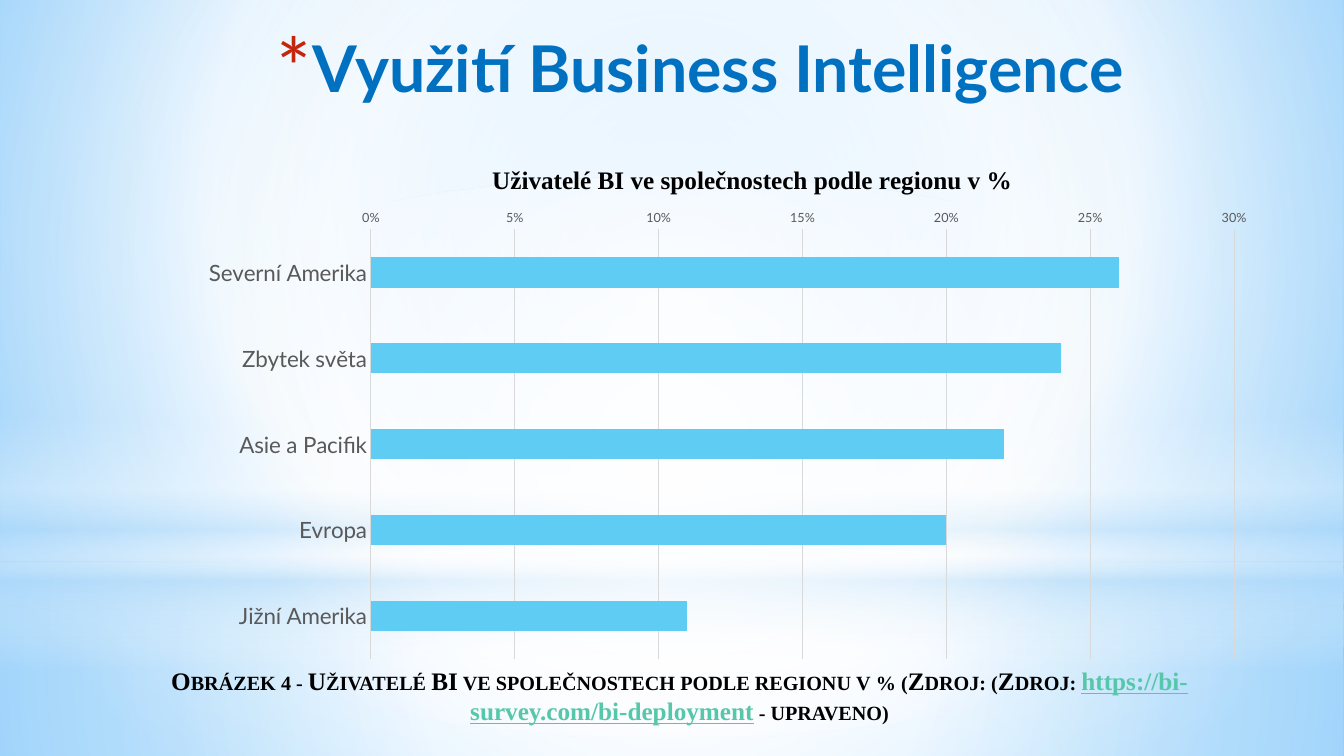
"""Build a slide with a bar chart of Business Intelligence users by region."""
from pptx import Presentation
from pptx.chart.data import CategoryChartData
from pptx.dml.color import RGBColor
from pptx.enum.chart import XL_CHART_TYPE as Chart, XL_TICK_MARK as Tick
from pptx.enum.shapes import MSO_SHAPE as Preset
from pptx.enum.text import MSO_ANCHOR as Anchor, MSO_AUTO_SIZE as Fit, PP_ALIGN as Align
from pptx.oxml import parse_xml
from pptx.oxml.ns import nsdecls, qn
from pptx.util import Inches, Pt

TITLE = "Využití Business Intelligence"
CHART_TITLE = "Uživatelé BI ve společnostech podle regionu v %"
REGIONS = {
    "Severní Amerika": 0.26,
    "Zbytek světa": 0.24,
    "Asie a Pacifik": 0.22,
    "Evropa": 0.20,
    "Jižní Amerika": 0.11,
}
CAPTION = [
    ("Obrázek 4 - Uživatelé BI ve společnostech podle regionu v % (Zdroj: (Zdroj: ", "caption"),
    ("https://bi-survey.com/bi-deployment", "source"),
    (" - upraveno)", "caption"),
]
SERIF = {"name": "Times New Roman", "size": 18, "bold": True}
THEME = {
    "title": {"name": "Lato", "size": 46, "bold": True, "color": "0070C0"},
    "chart": {"name": "Lato", "size": 10, "color": "000000"},
    "chart title": {**SERIF, "color": "000000"},
    "regions": {"name": "Lato", "size": 16, "bold": False, "color": "595959"},
    "shares": {"name": "Lato", "size": 9, "bold": False, "color": "595959"},
    "caption": {**SERIF, "color": "000000"},
    "source": {**SERIF, "color": "56C7AA", "underline": True},
    "bar": "5ECCF3",
    "grid": "D9D9D9",
    "bullet": "C3260C",
}
WIDTH, HEIGHT = 13.33, 7.5
HORIZON = 5.58
CENTRE = (50, 50, 50, 50)
SKY = ([(0, "9ED5FF", 100), (60, "FFFFFF", 100), (100, "5BB9FF", 100)], (20, 10, 20, 60))
GLOWS = [
    (Preset.RECTANGLE, HORIZON, HEIGHT - HORIZON,
     [(0, "FFFFFF", 91), (37, "FFFFFF", 76), (100, "B4DCFA", 79)], CENTRE),
    (Preset.RECTANGLE, 0, HORIZON,
     [(0, "FFFFFF", 89), (48, "FFFFFF", 62), (100, "B4DCFA", 79)], CENTRE),
    (Preset.RECTANGLE, 4.12, 2.5,
     [(0, "FFFFFF", 0), (29, "FFFFFF", 30), (45, "B4DCFA", 40),
      (55, "FFFFFF", 26), (65, "B4DCFA", 60), (100, "FFFFFF", 0)], None),
    (Preset.OVAL, 1.75, HORIZON, [(0, "FFFFFF", 100), (56, "FFFFFF", 0)], CENTRE),
]
PLACES = {
    "title": (2.07, 0.23, 9.75, 1.4),
    "chart": (1.67, 0.94, 10.92, 5.6),
    "caption": (1.28, 6.6, 10.92, 0.63),
}
TITLE_LAYOUT = {"x": 0.29, "y": 0.115}
PLOT_LAYOUT = {"x": 0.184, "y": 0.239, "w": 0.784, "h": 0.761}


def assign(target, values):
    for name, value in values.items():
        setattr(target, name, value)


def place(name):
    return [Inches(length) for length in PLACES[name]]


def style(font, role):
    values = dict(THEME[role])
    font.color.rgb = RGBColor.from_string(values.pop("color"))
    assign(font, {**values, "size": Pt(values["size"])})


def paint_gradient(fill, owner, stops, focus):
    fill.solid()
    marks = "".join(
        f'<a:gs pos="{pos * 1000}"><a:srgbClr val="{color}">'
        f'<a:alpha val="{opacity * 1000}"/></a:srgbClr></a:gs>'
        for pos, color, opacity in stops)
    if focus:
        edges = " ".join(f'{side}="{share * 1000}"' for side, share in zip("ltrb", focus))
        course = f'<a:path path="circle"><a:fillToRect {edges}/></a:path>'
    else:
        course = '<a:lin ang="5400000" scaled="0"/>'
    gradient = parse_xml(f'<a:gradFill {nsdecls("a")} rotWithShape="1">'
                         f'<a:gsLst>{marks}</a:gsLst>{course}</a:gradFill>')
    solid = next(owner.iter(qn("a:solidFill")))
    solid.getparent().replace(solid, gradient)


def set_layout(element, shares, inner=False):
    for old in element.findall(qn("c:layout")):
        element.remove(old)
    target = '<c:layoutTarget val="inner"/>' if inner else ""
    modes = "".join(f'<c:{axis}Mode val="edge"/>' for axis in "xy")
    sizes = "".join(f'<c:{key} val="{share}"/>' for key, share in shares.items())
    layout = parse_xml(f'<c:layout {nsdecls("c")}><c:manualLayout>{target}{modes}{sizes}'
                       '</c:manualLayout></c:layout>')
    if inner:
        element.insert(0, layout)
    else:
        element.find(qn("c:tx")).addnext(layout)


def add_backdrop(page):
    paint_gradient(page.background.fill, page._element.cSld, *SKY)
    for preset, top, height, stops, focus in GLOWS:
        glow = page.shapes.add_shape(preset, 0, Inches(top), Inches(WIDTH), Inches(height))
        glow.shadow.inherit = False
        paint_gradient(glow.fill, glow._element.spPr, stops, focus)
        glow.line.fill.background()


def add_title(page):
    title = page.shapes.title
    page.shapes._spTree.append(title._element)
    assign(title, dict(zip(("left", "top", "width", "height"), place("title"))))
    assign(title.text_frame, {"text": TITLE, "vertical_anchor": Anchor.TOP,
                              "word_wrap": True, "auto_size": Fit.NONE})
    para = title.text_frame.paragraphs[0]
    para.alignment = Align.CENTER
    props = para._p.get_or_add_pPr()
    indent = Inches(0.35)
    props.set("marL", str(indent))
    props.set("indent", str(-indent))
    for bullet in (f'buClr {nsdecls("a")}><a:srgbClr val="{THEME["bullet"]}"/></a:buClr',
                   f'buSzPct {nsdecls("a")} val="128000"/',
                   f'buFont {nsdecls("a")} typeface="Lato"/',
                   f'buChar {nsdecls("a")} char="*"/'):
        props.append(parse_xml(f"<a:{bullet}>"))
    style(para.runs[0].font, "title")


def add_region_chart(page):
    data = CategoryChartData(number_format="0%")
    data.categories = list(REGIONS)
    data.add_series(CHART_TITLE, list(REGIONS.values()))
    chart = page.shapes.add_chart(Chart.BAR_CLUSTERED, *place("chart"), data).chart
    style(chart.font, "chart")
    assign(chart, {"has_legend": False, "has_title": True})
    heading = chart.chart_title
    heading.text_frame.text = CHART_TITLE
    style(heading.text_frame.paragraphs[0].runs[0].font, "chart title")
    heading.include_in_layout = False
    set_layout(heading._element, TITLE_LAYOUT)

    plot = chart.plots[0]
    assign(plot, {"gap_width": 182, "vary_by_categories": False})
    set_layout(plot._element.getparent(), PLOT_LAYOUT, inner=True)
    bars = plot.series[0].format.fill
    bars.solid()
    bars.fore_color.rgb = RGBColor.from_string(THEME["bar"])

    regions, shares = chart.category_axis, chart.value_axis
    regions.reverse_order = True
    assign(shares, {"minimum_scale": 0, "maximum_scale": 0.3, "major_unit": 0.05,
                    "has_major_gridlines": True})
    assign(shares.tick_labels, {"number_format": "0%", "number_format_is_linked": False})
    for axis, role in ((regions, "regions"), (shares, "shares")):
        assign(axis, {"major_tick_mark": Tick.NONE, "minor_tick_mark": Tick.NONE})
        style(axis.tick_labels.font, role)
    for line in (regions.format.line, shares.major_gridlines.format.line):
        line.width = Pt(0.75)
        line.color.rgb = RGBColor.from_string(THEME["grid"])
    shares.format.line.fill.background()


def add_caption(page):
    frame = page.shapes.add_textbox(*place("caption")).text_frame
    assign(frame, {"word_wrap": True, "margin_left": 0, "margin_right": 0,
                   "margin_top": 0, "margin_bottom": 0})
    para = frame.paragraphs[0]
    assign(para, {"alignment": Align.CENTER, "space_after": Pt(10)})
    for text, role in CAPTION:
        span = para.add_run()
        span.text = text
        style(span.font, role)
        if role == "caption":
            span._r.get_or_add_rPr().set("cap", "small")


def main():
    deck = Presentation()
    assign(deck, {"slide_width": Inches(WIDTH), "slide_height": Inches(HEIGHT)})
    page = deck.slides.add_slide(deck.slide_layouts[5])
    for add_part in (add_backdrop, add_title, add_region_chart, add_caption):
        add_part(page)
    deck.save("out.pptx")


if __name__ == "__main__":
    main()
